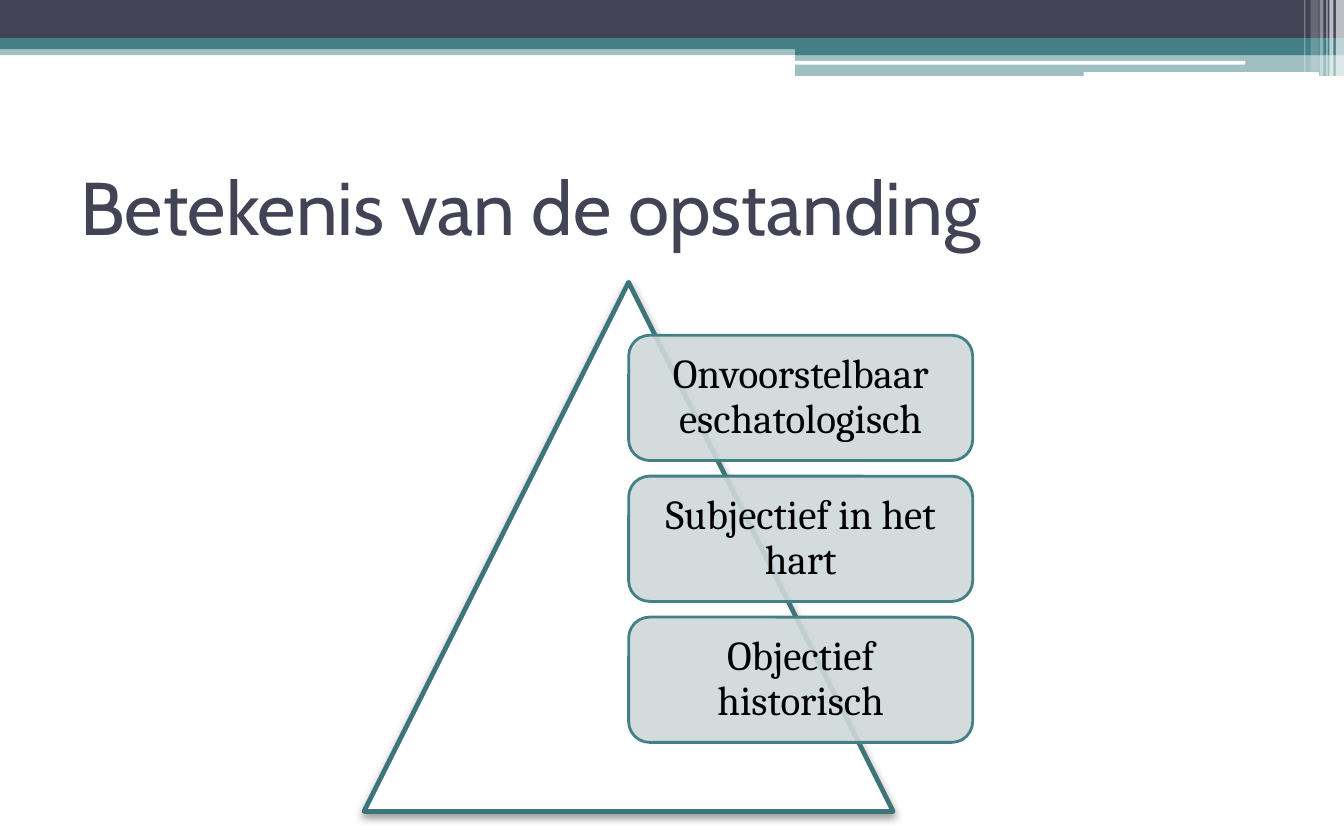
from lxml import etree
from pptx import Presentation
from pptx.dml.color import RGBColor
from pptx.enum.shapes import MSO_SHAPE as SHAPE
from pptx.enum.text import MSO_ANCHOR as ANCHOR, PP_ALIGN as ALIGN
from pptx.oxml.ns import qn
from pptx.util import Pt

COLORS = {
    "navy": "424456", "teal": "438086", "edge": "3D747A",
    "mist": "CFD8D9", "white": "FFFFFF", "black": "000000",
}


class Deck:
    """Holds the style and the current slide."""

    title = {"size": Pt(40), "name": "Cabin"}
    label = {"size": Pt(22), "name": "Cambria"}

    def __init__(self, width, height):
        self.prs = Presentation()
        self.prs.slide_width, self.prs.slide_height = Pt(width), Pt(height)
        self.s = self.prs.slides.add_slide(self.prs.slide_layouts[6])

    def color(self, name):
        return RGBColor.from_string(COLORS[name])

    def shape(self, kind, box, fill, alpha=100, line=None, weight=0):
        sp = self.s.shapes.add_shape(kind, *map(Pt, box))
        sp.shadow.inherit = False
        sp.fill.solid()
        sp.fill.fore_color.rgb = self.color(fill)
        if alpha < 100:
            clr = sp.fill._xPr.find(qn("a:solidFill"))[0]
            etree.SubElement(clr, qn("a:alpha"), val=str(alpha * 1000))
        if line:
            sp.line.color.rgb = self.color(line)
            sp.line.width = Pt(weight)
        else:
            sp.line.fill.background()
        return sp

    def shadow(self, sp, blur, dist, angle, alpha):
        effects = sp._element.spPr.find(qn("a:effectLst"))
        outer = etree.SubElement(
            effects, qn("a:outerShdw"), blurRad=str(Pt(blur)),
            dist=str(Pt(dist)), dir=str(angle * 60000), rotWithShape="0")
        clr = etree.SubElement(outer, qn("a:srgbClr"), val=COLORS["black"])
        etree.SubElement(clr, qn("a:alpha"), val=str(alpha * 1000))

    def text(self, sp, text, font, color, inset=None, **paragraph):
        tf = sp.text_frame
        tf.word_wrap = True
        tf.vertical_anchor = ANCHOR.MIDDLE
        if inset is not None:
            for side in ("left", "right", "top", "bottom"):
                setattr(tf, f"margin_{side}", Pt(inset))
        p = tf.paragraphs[0]
        for key, value in paragraph.items():
            setattr(p, key, value)
        r = p.add_run()
        r.text = text
        for key, value in font.items():
            setattr(r.font, key, value)
        r.font.color.rgb = self.color(color)

    def heading(self, box, text):
        sp = self.s.shapes.add_textbox(*map(Pt, box))
        self.text(sp, text, self.title, "navy")

    def card(self, box, text):
        sp = self.shape(SHAPE.ROUNDED_RECTANGLE, box, "mist", 90, "teal", 1.5)
        self.text(sp, text, self.label, "black", inset=6.5,
                  alignment=ALIGN.CENTER, line_spacing=0.9)


def main():
    deck = Deck(720, 450)

    # Header bands: left, top, width, height, colour, opacity
    for *box, fill, alpha in (
        (0, 23.8, 720, 5.8, "teal", 50),
        (0, 0, 720, 20.4, "navy", 100),
        (0, 20.4, 720, 6, "teal", 100),
        (426, 23.8, 294, 5.8, "teal", 100),
        (426, 29, 294, 11.7, "teal", 50),
    ):
        deck.shape(SHAPE.RECTANGLE, box, fill, alpha)

    # White slits in the bands
    for box in ((425.5, 32.6, 241.5, 2), (580.5, 38.7, 126, 2.3)):
        deck.shape(SHAPE.ROUNDED_RECTANGLE, box, "white")

    # Translucent stripes at the right end: left, width, height, opacity
    for left, width, height, alpha in (
        (715.6, 4.4, 41, 65), (712.2, 2.1, 41, 65), (710.5, 0.7, 41, 60),
        (706.9, 2.1, 41, 40), (702.2, 4.3, 38.4, 20), (698.6, 0.7, 38.4, 30),
    ):
        deck.shape(SHAPE.RECTANGLE, (left, 0, width, height), "white", alpha)

    # Title
    deck.heading((36, 75, 648, 70), "Betekenis van de opstanding")

    # Pyramid
    pyramid = deck.shape(SHAPE.ISOSCELES_TRIANGLE, (195, 151.2, 283.5, 283.5),
                         "white", line="edge", weight=2.5)
    deck.shadow(pyramid, blur=4.1, dist=2, angle=90, alpha=40)

    # Cards, from top to bottom
    top, pitch = 179.6, 75.5
    for i, text in enumerate((
        "Onvoorstelbaar eschatologisch",
        "Subjectief in het hart",
        "Objectief historisch",
    )):
        deck.card((336.8, top + i * pitch, 184.3, 67.1), text)

    deck.prs.save("out.pptx")


if __name__ == "__main__":
    main()
